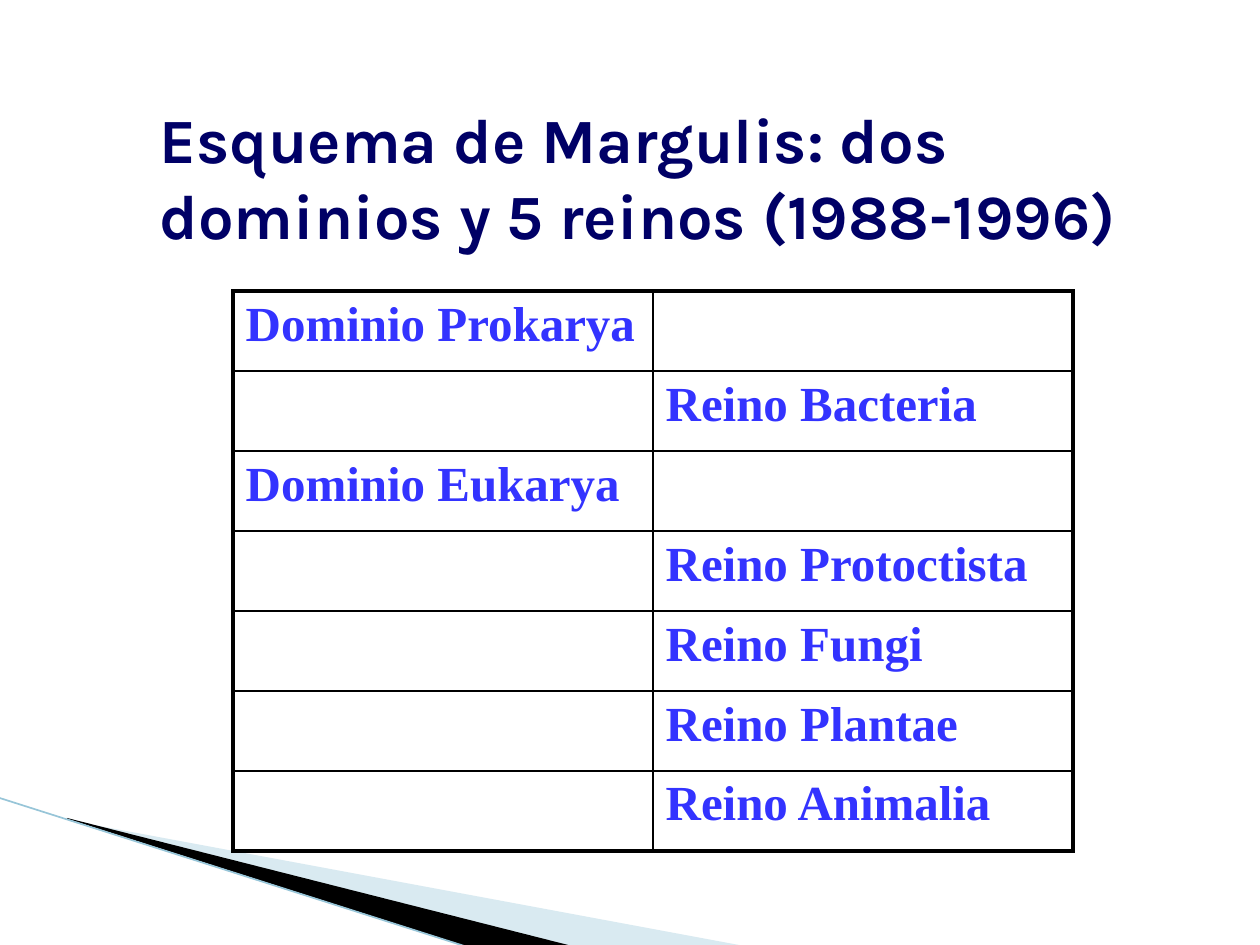
import lxml.etree
import pptx
import pptx.dml.color
import pptx.enum.shapes
import pptx.oxml.ns
import pptx.util

Cm = pptx.util.Cm
Pt = pptx.util.Pt
RGB = pptx.dml.color.RGBColor
qn = pptx.oxml.ns.qn

BLACK = RGB(0x00, 0x00, 0x00)
NAVY = RGB(0x00, 0x00, 0x66)
BLUE = RGB(0x33, 0x33, 0xFF)
PALE = RGB(0xA0, 0xCB, 0xDC)
TEAL = RGB(0x97, 0xC5, 0xD8)

ROWS = [
    ("Dominio Prokarya", ""),
    ("", "Reino Bacteria"),
    ("Dominio Eukarya", ""),
    ("", "Reino Protoctista"),
    ("", "Reino Fungi"),
    ("", "Reino Plantae"),
    ("", "Reino Animalia"),
]


def style(frame, font, size, color):
    """Format every run of a text frame in bold."""
    for para in frame.paragraphs:
        for run in para.runs:
            run.font.name = font
            run.font.size = Pt(size)
            run.font.bold = True
            run.font.color.rgb = color


def wedge(slide, left, top, points, color):
    """Draw a filled outline from points relative to the box."""
    spots = [(Cm(left + x), Cm(top + y)) for x, y in points]
    form = slide.shapes.build_freeform(*spots[0])
    form.add_line_segments(spots[1:], close=True)
    shape = form.convert_to_shape()
    shape.shadow.inherit = False
    shape.fill.solid()
    shape.fill.fore_color.rgb = color
    shape.line.fill.background()
    return shape


def corner(slide, left, top, width, height):
    """Draw the wedges and the line at the foot of the slide."""
    pale = wedge(slide, left, top, [
        (1.4, 0.46), (width, height), (11.58, height), (1.4, 0.43)], PALE)
    tint = next(pale.element.iter(qn("a:srgbClr")))
    lxml.etree.SubElement(tint, qn("a:alpha"), val="40000")
    wedge(slide, left, top, [
        (1.35, 0.41), (11.61, height), (9.45, height), (1.37, 0.43)], BLACK)
    line = slide.shapes.add_connector(
        pptx.enum.shapes.MSO_CONNECTOR.STRAIGHT,
        Cm(left - 0.03), Cm(top), Cm(left + 9.42), Cm(top + height))
    line.line.color.rgb = TEAL
    line.line.width = Pt(0.95)
    props = line.element.find(qn("p:spPr"))
    lxml.etree.SubElement(props, qn("a:effectLst"))


def title(slide, left, top, width, height):
    """Place the heading."""
    box = slide.shapes.add_textbox(Cm(left), Cm(top), Cm(width), Cm(height))
    frame = box.text_frame
    frame.word_wrap = True
    frame.text = "Esquema de Margulis: dos dominios y 5 reinos (1988-1996)"
    style(frame, "Karla", 36, NAVY)


def border(cell, side, width):
    """Give one side of a cell a black line."""
    props = cell._tc.get_or_add_tcPr()
    line = lxml.etree.SubElement(props, qn("a:ln" + side), w=str(Pt(width)))
    fill = lxml.etree.SubElement(line, qn("a:solidFill"))
    lxml.etree.SubElement(fill, qn("a:srgbClr"), val=str(BLACK))


def grid(slide, left, top, width, height):
    """Build the table of domains and kingdoms with a heavy outer frame."""
    rows, cols = len(ROWS), len(ROWS[0])
    table = slide.shapes.add_table(
        rows, cols, Cm(left), Cm(top), Cm(width), Cm(height)).table
    table.first_row = False
    table.horz_banding = False
    for row in table.rows:
        row.height = Cm(height / rows)
    for r, texts in enumerate(ROWS):
        for c, text in enumerate(texts):
            cell = table.cell(r, c)
            edges = {"L": c == 0, "R": c == cols - 1,
                     "T": r == 0, "B": r == rows - 1}
            for side, outer in edges.items():
                border(cell, side, 2.25 if outer else 1)
            cell.fill.background()
            if text:
                cell.text_frame.text = text
                style(cell.text_frame, "Times New Roman", 28, BLUE)


def main():
    """Build and save the slide."""
    deck = pptx.Presentation()
    deck.slide_width = Cm(25.4)
    deck.slide_height = Cm(19.05)
    slide = deck.slides.add_slide(deck.slide_layouts[6])
    corner(slide, 0, 16.08, 15.11, 3.01)
    title(slide, 2.97, 1.9, 20.93, 4.01)
    grid(slide, 4.7, 5.87, 16.93, 11.29)
    deck.save("out.pptx")


if __name__ == "__main__":
    main()
